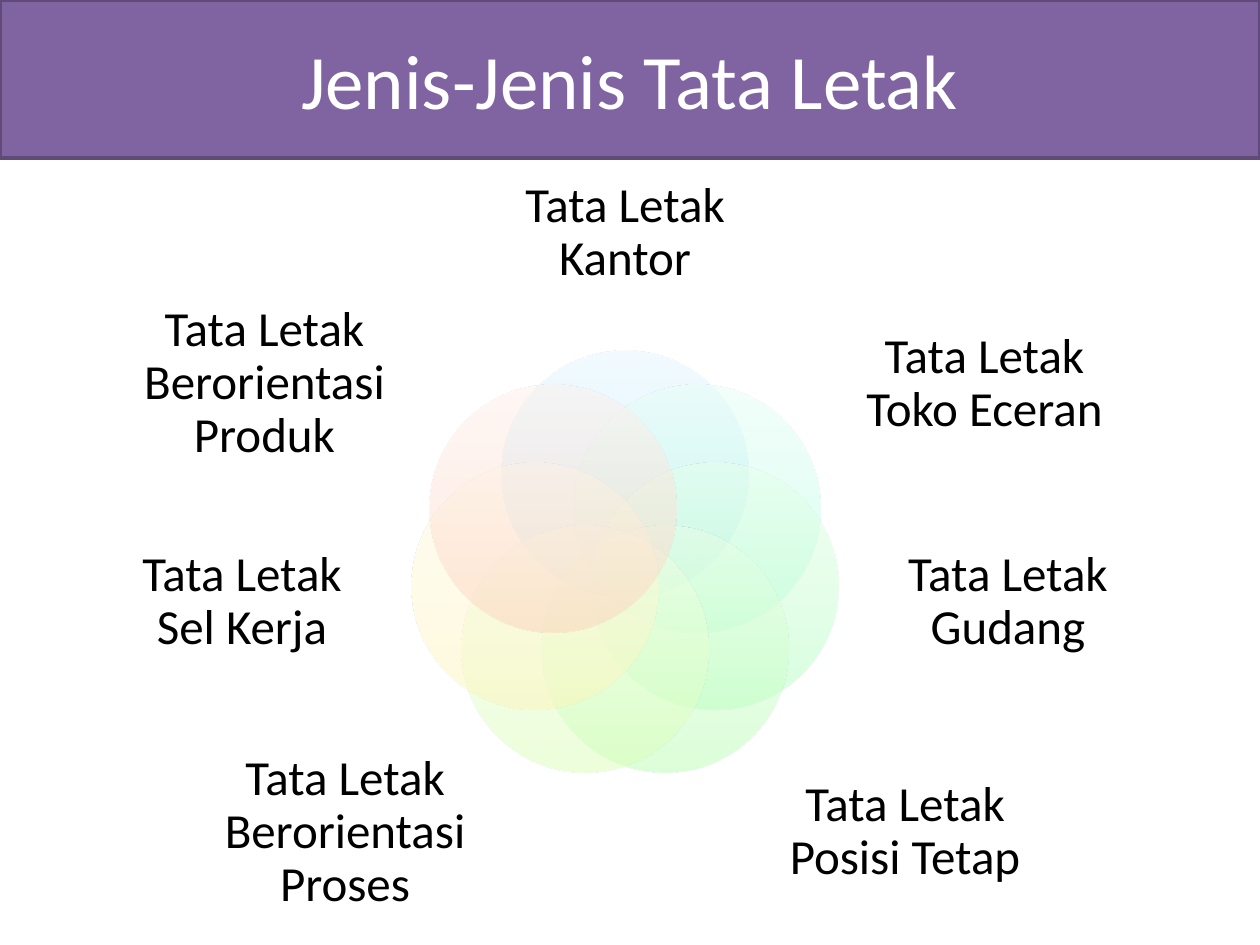
from math import cos, pi, sin

from pptx import Presentation
from pptx.dml.color import RGBColor
from pptx.enum.shapes import MSO_SHAPE
from pptx.enum.text import MSO_ANCHOR, PP_ALIGN
from pptx.oxml import parse_xml
from pptx.oxml.ns import nsdecls
from pptx.util import Emu, Pt

EMU_PER_PX = 914400 / 126
SLIDE_WIDTH, SLIDE_HEIGHT = 1260, 945

PURPLE = RGBColor(0x80, 0x64, 0xA2)
DARK_PURPLE = RGBColor(0x5F, 0x4A, 0x78)
WHITE = RGBColor(0xFF, 0xFF, 0xFF)
BLACK = RGBColor(0x00, 0x00, 0x00)

# Ring of overlapping petals
RING_X, RING_Y, RING_RADIUS = 625, 566, 92
PETAL_SIZE = 247
STOP_POSITIONS = (0, 35, 100)

# Label, label box (left, top, width, height), petal gradient; clockwise from the top
LAYOUT_TYPES = [
    ("Tata Letak Kantor", (484, 158, 282, 151), ("A7E6FF", "C1EDFF", "E7F8FF")),
    ("Tata Letak Toko Eceran", (851, 301, 267, 166), ("ABFFE3", "C3FFEA", "E8FFF7")),
    ("Tata Letak Gudang", (877, 513, 262, 178), ("AFFFBD", "C6FFD0", "E9FFED")),
    ("Tata Letak Posisi Tetap", (764, 751, 282, 163), ("B9FFB2", "CDFFC9", "ECFFEA")),
    ("Tata Letak Berorientasi Proses", (204, 751, 282, 163), ("DBFFB6", "E5FFCB", "F5FFEB")),
    ("Tata Letak Sel Kerja", (111, 513, 262, 178), ("FFF6B9", "FFF8CE", "FFFCEC")),
    ("Tata Letak Berorientasi Produk", (131, 301, 267, 166), ("FFD2BD", "FFDED0", "FFF2ED")),
]


def px(length):
    return Emu(round(length * EMU_PER_PX))


def write_text(frame, text, size, color, line_spacing=1.0):
    frame.word_wrap = True
    frame.vertical_anchor = MSO_ANCHOR.MIDDLE
    paragraph = frame.paragraphs[0]
    paragraph.alignment = PP_ALIGN.CENTER
    paragraph.line_spacing = line_spacing
    run = paragraph.add_run()
    run.text = text
    run.font.name = "Calibri"
    run.font.size = Pt(size)
    run.font.color.rgb = color


def add_title_band(slide, title):
    band = slide.shapes.add_shape(MSO_SHAPE.RECTANGLE, 0, 0, px(SLIDE_WIDTH), px(158))
    band.shadow.inherit = False
    band.fill.solid()
    band.fill.fore_color.rgb = PURPLE
    band.line.color.rgb = DARK_PURPLE
    band.line.width = Pt(2)
    write_text(band.text_frame, title, size=44, color=WHITE)


def add_petal(slide, center_x, center_y, colors):
    petal = slide.shapes.add_shape(
        MSO_SHAPE.OVAL, px(center_x - PETAL_SIZE / 2), px(center_y - PETAL_SIZE / 2),
        px(PETAL_SIZE), px(PETAL_SIZE))
    petal.shadow.inherit = False
    petal.line.fill.background()
    # Half-transparent gradient running upwards, placed right after the geometry
    stops = "".join(
        f'<a:gs pos="{position * 1000}"><a:srgbClr val="{color}">'
        '<a:alpha val="50000"/></a:srgbClr></a:gs>'
        for position, color in zip(STOP_POSITIONS, colors))
    gradient = parse_xml(
        f'<a:gradFill {nsdecls("a")} rotWithShape="1"><a:gsLst>{stops}</a:gsLst>'
        '<a:lin ang="16200000" scaled="0"/></a:gradFill>')
    petal.element.spPr.insert(2, gradient)


def add_label(slide, text, box):
    frame = slide.shapes.add_textbox(*map(px, box)).text_frame
    frame.margin_left = frame.margin_right = 0
    frame.margin_top = frame.margin_bottom = 0
    write_text(frame, text, size=28, color=BLACK, line_spacing=0.9)


def main():
    presentation = Presentation()
    presentation.slide_width = px(SLIDE_WIDTH)
    presentation.slide_height = px(SLIDE_HEIGHT)
    slide = presentation.slides.add_slide(presentation.slide_layouts[6])

    add_title_band(slide, "Jenis-Jenis Tata Letak")

    # Petals at equal angles, each with its label
    for index, (label, box, colors) in enumerate(LAYOUT_TYPES):
        angle = 2 * pi * index / len(LAYOUT_TYPES)
        add_petal(slide, RING_X + RING_RADIUS * sin(angle),
                  RING_Y - RING_RADIUS * cos(angle), colors)
        add_label(slide, label, box)

    presentation.save("out.pptx")


if __name__ == "__main__":
    main()
